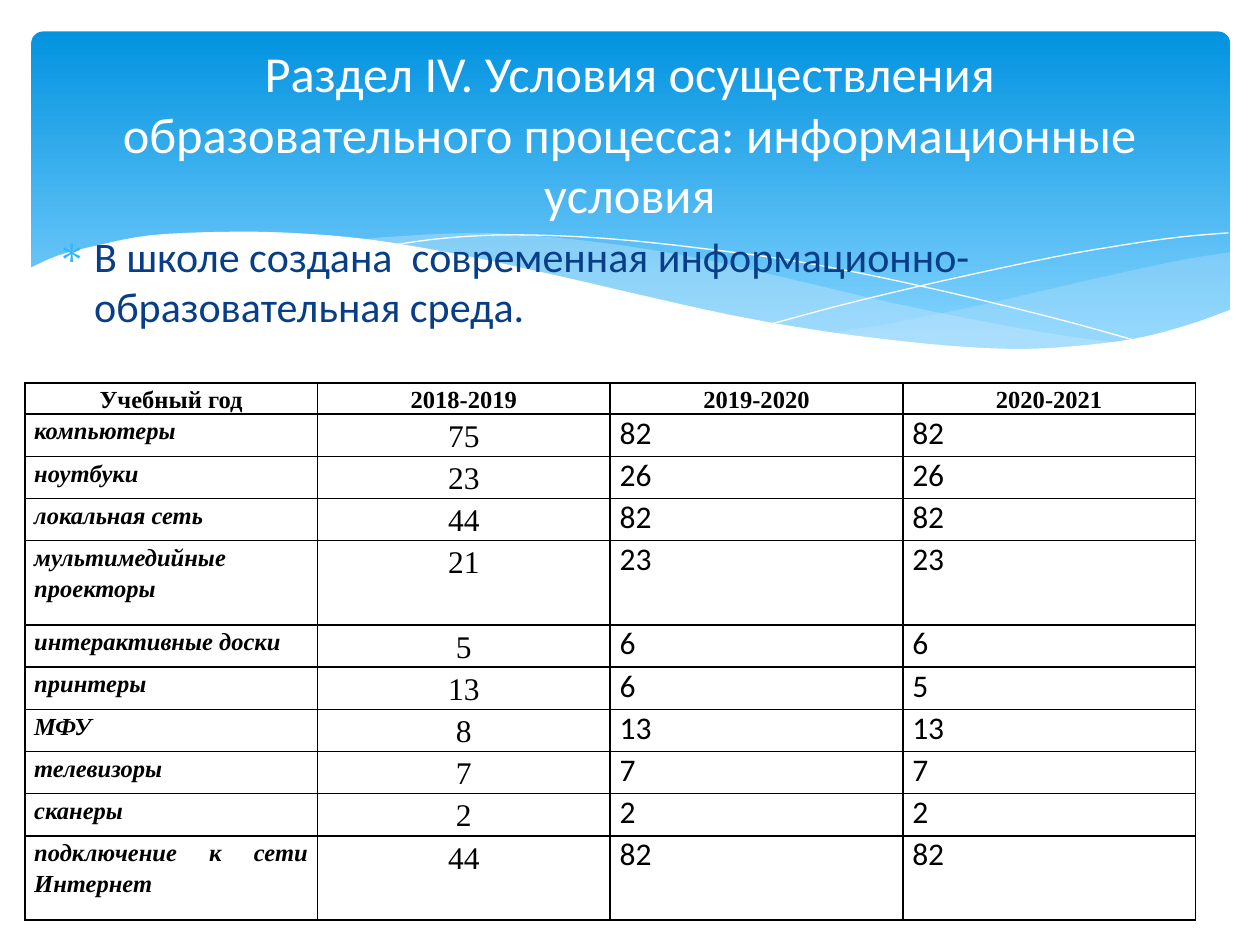
from lxml import etree
from pptx import Presentation
from pptx import util as u
from pptx.dml.color import RGBColor
from pptx.enum import shapes, text
from pptx.oxml.ns import qn

HUES = {"deep": "0293E0", "pale": "83D3FE", "mist": "C6E7FC", "white": "FFFFFF",
        "navy": "073E87", "star": "31B6FD", "black": "000000"}
SANS, SERIF = "Calibri", "Times New Roman"

EAST = [(24.16, 4.45), (23.11, 4.62), (21.23, 5.03), (19.15, 5.51), (17.3, 5.89),
        (16.15, 6.1), (17.63, 6.27), (18.9, 6.4), (20.04, 6.43), (21.29, 6.35),
        (22.35, 6.2), (23.29, 5.94), (24.16, 5.64)]
MID = [(22.05, 6.3), (20.62, 6.1), (19.05, 5.82), (17.3, 5.46), (15.34, 5),
       (13.82, 4.65), (12.42, 4.39), (11.18, 4.22), (10.03, 4.11), (9.02, 4.06),
       (7.7, 4.11), (6.63, 4.22), (8.05, 4.42), (9.63, 4.72), (10.77, 5),
       (12.83, 5.46), (14.63, 5.84), (16.26, 6.12), (17.7, 6.32), (19, 6.4),
       (20.14, 6.43), (21.13, 6.4), (22.05, 6.3)]
FALL = [(7.21, 4.32), (8.1, 4.19), (9.19, 4.11), (10.36, 4.11), (11.79, 4.19),
        (13.49, 4.37), (15.52, 4.65), (17.83, 5.11), (20.47, 5.74), (22.4, 6.27)]
RISE = [(14.94, 5.89), (16.43, 5.49), (18.36, 5.03), (20.6, 4.55), (22.1, 4.29),
        (23.19, 4.14), (24.13, 4.06)]
CREST = [(24.18, 5.61), (23.24, 5.94), (22.2, 6.2), (20.96, 6.35), (19.91, 6.4),
         (18.69, 6.35), (17.35, 6.22), (15.82, 6.02), (14.07, 5.71), (12.14, 5.28),
         (10.72, 4.95), (8.64, 4.5), (6.78, 4.19), (5.21, 4.06), (3.86, 4.04),
         (2.39, 4.11), (1.3, 4.32), (0.53, 4.52), (-0.05, 4.78)]
BASE = [(-0.05, 7.72), (24.18, 7.72)]

TITLE = "Раздел IV. Условия осуществления образовательного процесса: информационные условия"
LEAD = "В школе создана  современная информационно-образовательная среда."
ROWS = [
    ("Учебный год", "2018-2019", "2019-2020", "2020-2021"),
    ("компьютеры", "75", "82", "82"),
    ("ноутбуки", "23", "26", "26"),
    ("локальная сеть", "44", "82", "82"),
    ("мультимедийные проекторы", "21", "23", "23"),
    ("интерактивные доски", "5", "6", "6"),
    ("принтеры", "13", "6", "5"),
    ("МФУ", "8", "13", "13"),
    ("телевизоры", "7", "7", "7"),
    ("сканеры", "2", "2", "2"),
    ("подключение к сети Интернет", "44", "82", "82"),
]
TALL = (4, 10)


def hue(name):
    """Return the named colour."""
    return RGBColor.from_string(HUES[name])


def style(para, size, face, tint, bold=False, slant=False):
    """Format every run of a paragraph."""
    for run in para.runs:
        font = run.font
        font.size, font.name, font.bold, font.italic = u.Pt(size), face, bold, slant
        font.color.rgb = hue(tint)


def bend(knots, steps=4):
    """Return points on a smooth curve through the knots."""
    ends = [knots[0], *knots, knots[-1]]
    out = [knots[0]]
    for a, b, c, d in zip(ends, ends[1:], ends[2:], ends[3:]):
        for k in range(1, steps + 1):
            t = k / steps
            out.append(tuple(
                q + t / 2 * (r - p + t * (2 * p - 5 * q + 4 * r - s + t * (3 * q - p - 3 * r + s)))
                for p, q, r, s in zip(a, b, c, d)))
    return out


def trace(slide, box, dots, tint, alpha=100, closed=True):
    """Draw a filled wave or an open hairline inside the box."""
    pts = [(u.Cm(box[0] + x), u.Cm(box[1] + y)) for x, y in dots]
    pen = slide.shapes.build_freeform(*pts[0], scale=1.0)
    pen.add_line_segments(pts[1:], close=closed)
    wave = pen.convert_to_shape()
    wave.shadow.inherit = False
    if not closed:
        wave.fill.background()
        wave.line.color.rgb = hue(tint)
        wave.line.width = u.Pt(0)
        return
    wave.fill.solid()
    wave.fill.fore_color.rgb = hue(tint)
    if alpha < 100:
        ink = wave._element.spPr.find(".//" + qn("a:srgbClr"))
        etree.SubElement(ink, qn("a:alpha"), val=str(alpha * 1000))
    wave.line.fill.background()


def banner(slide, box):
    """Draw the blue band with its waves."""
    band = slide.shapes.add_shape(shapes.MSO_SHAPE.ROUNDED_RECTANGLE, *map(u.Cm, box))
    band.adjustments[0] = 0.034
    band.shadow.inherit = False
    band.line.fill.background()
    band.fill.gradient()
    band.fill.gradient_angle = 270
    for stop, tint, pos in zip(band.fill.gradient_stops, ("deep", "pale"), (0, 0.9)):
        stop.color.rgb, stop.position = hue(tint), pos
    trace(slide, box, bend(EAST), "mist", 29)
    trace(slide, box, bend(MID), "mist", 40)
    for line in (FALL, RISE):
        trace(slide, box, bend(line), "white", closed=False)
    trace(slide, box, bend(CREST) + BASE, "white")


def head(slide, box):
    """Place the title above the band."""
    title = slide.shapes.title
    slide.shapes._spTree.append(title._element)
    title.left, title.top, title.width, title.height = map(u.Cm, box)
    frame = title.text_frame
    frame.text = TITLE
    frame.auto_size = text.MSO_AUTO_SIZE.NONE
    frame.vertical_anchor = text.MSO_ANCHOR.MIDDLE
    para = frame.paragraphs[0]
    para.alignment = text.PP_ALIGN.CENTER
    style(para, 28.8, SANS, "white")


def lead(slide, box):
    """Place the bulleted sentence."""
    frame = slide.shapes.add_textbox(*map(u.Cm, box)).text_frame
    frame.word_wrap = True
    frame.text = LEAD
    para = frame.paragraphs[0]
    para.space_before = u.Pt(4.8)
    style(para, 24, SANS, "navy")
    props = para._p.get_or_add_pPr()
    props.set("marL", str(u.Cm(0.76)))
    props.set("indent", str(u.Cm(-0.76)))
    tint = etree.SubElement(props, qn("a:buClr"))
    etree.SubElement(tint, qn("a:srgbClr"), val=HUES["star"])
    etree.SubElement(props, qn("a:buFont"), typeface="Symbol")
    etree.SubElement(props, qn("a:buChar"), char="∗")


def edge(cell):
    """Give a cell thin black borders and no fill."""
    props = cell._tc.get_or_add_tcPr()
    for side in ("lnL", "lnR", "lnT", "lnB"):
        line = etree.SubElement(props, qn("a:" + side), w=str(u.Pt(1)))
        ink = etree.SubElement(line, qn("a:solidFill"))
        etree.SubElement(ink, qn("a:srgbClr"), val=HUES["black"])
    cell.fill.background()


def fill(cell, word, row, col):
    """Write and format one table cell."""
    cell.margin_left = cell.margin_right = u.Cm(0.19)
    cell.margin_top = cell.margin_bottom = 0
    cell.text = word
    para = cell.text_frame.paragraphs[0]
    if row == 0 or col < 2:
        para.line_spacing, para.space_after = 1.15, u.Pt(10)
        name = row > 0 and col == 0
        para.alignment = text.PP_ALIGN.JUSTIFY if name else text.PP_ALIGN.CENTER
        bold = row == 0 or name
        style(para, 14 if bold else 18, SERIF, "black", bold, name)
    else:
        style(para, 18, SANS, "black")
    edge(cell)


def grid(slide, box):
    """Build the equipment table."""
    wide = len(ROWS[0])
    table = slide.shapes.add_table(len(ROWS), wide, *map(u.Cm, box)).table
    table.first_row = table.horz_banding = False
    for col in table.columns:
        col.width = u.Cm(box[2] / wide)
    for r, words in enumerate(ROWS):
        table.rows[r].height = u.Cm(0.6 if r == 0 else 1.7 if r in TALL else 0.85)
        for c, word in enumerate(words):
            fill(table.cell(r, c), word, r, c)


def main():
    """Build and save the slide."""
    deck = Presentation()
    deck.slide_width, deck.slide_height = u.Cm(25.4), u.Cm(19.05)
    slide = deck.slides.add_slide(deck.slide_layouts[5])
    banner(slide, (0.635, 0.635, 24.16, 6.86))
    lead(slide, (0.89, 4.52, 23.6, 2.6))
    head(slide, (1.27, 0.94, 22.86, 3.48))
    grid(slide, (0.5, 7.72, 23.6, 11.1))
    deck.save("out.pptx")


if __name__ == "__main__":
    main()
